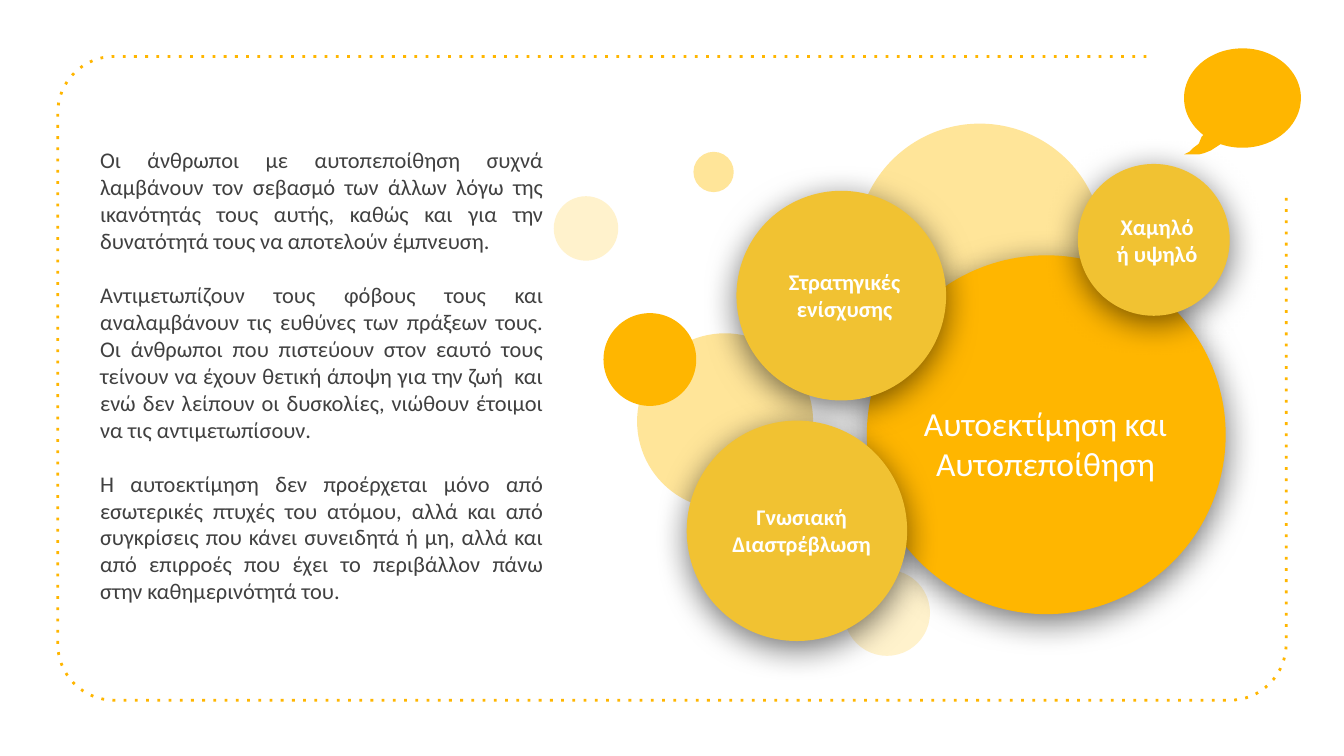
from dataclasses import dataclass
from math import cos, radians, sin

from lxml import etree
from pptx import Presentation
from pptx.dml.color import RGBColor
from pptx.enum.dml import MSO_LINE
from pptx.enum.shapes import MSO_SHAPE
from pptx.enum.text import MSO_ANCHOR, MSO_AUTO_SIZE, PP_ALIGN
from pptx.oxml.ns import qn
from pptx.util import Inches, Pt

OVAL = MSO_SHAPE.OVAL
DOT = MSO_LINE.ROUND_DOT
CENTER, JUSTIFY = PP_ALIGN.CENTER, PP_ALIGN.JUSTIFY
TOP, MIDDLE = MSO_ANCHOR.TOP, MSO_ANCHOR.MIDDLE
NO_FIT = MSO_AUTO_SIZE.NONE

# The slide is a grid of square cells, 100 columns wide, in 16:9
COLS, ROWS = 100, 56.25
CELL = Inches(0.1)


@dataclass(frozen=True)
class Theme:
    font: str = "Calibri"
    amber: str = "FFB600"
    gold: str = "F1C232"
    sand: str = "FFE599"
    cream: str = "FFF2CC"
    ink: str = "404040"
    white: str = "FFFFFF"
    shade: str = "000000"
    head: int = 18
    text: int = 12
    gap: float = 14.6
    line: float = 1.5


THEME = Theme()

TITLE = "Αυτοεκτίμηση και Αυτοπεποίθηση"
BODY = [
    "Οι άνθρωποι με αυτοπεποίθηση συχνά λαμβάνουν τον σεβασμό των άλλων "
    "λόγω της ικανότητάς τους αυτής, καθώς και για την δυνατότητά τους να "
    "αποτελούν έμπνευση.",
    "Αντιμετωπίζουν τους φόβους τους και αναλαμβάνουν τις ευθύνες των "
    "πράξεων τους. Οι άνθρωποι που πιστεύουν στον εαυτό τους τείνουν να "
    "έχουν θετική άποψη για την ζωή  και ενώ δεν λείπουν οι δυσκολίες, "
    "νιώθουν έτοιμοι να τις αντιμετωπίσουν.",
    "Η αυτοεκτίμηση δεν προέρχεται μόνο από εσωτερικές πτυχές του ατόμου, "
    "αλλά και από συγκρίσεις που κάνει συνειδητά ή μη, αλλά και από επιρροές "
    "που έχει το περιβάλλον πάνω στην καθημερινότητά του.",
]

# Column, row, diameter, colour
BUBBLES = [
    (62.8, 42.4, 6.4, THEME.cream),
    (41.2, 14.6, 4.8, THEME.cream),
    (47.4, 24.8, 13.1, THEME.sand),
    (63.7, 9.2, 18.4, THEME.sand),
    (44.9, 23.3, 6.9, THEME.amber),
    (51.6, 11.3, 3, THEME.sand),
]

# Column, row, diameter, label, label box
TOPICS = [
    (54.8, 14.2, 15.6, "Στρατηγικές ενίσχυσης", (55.3, 16.8, 15.1, 10.3)),
    (51.1, 31.3, 16.4, "Γνωσιακή Διαστρέβλωση", (52.5, 34.3, 14.3, 10.3)),
    (80.2, 12.2, 11.3, "Χαμηλό ή υψηλό", (81.8, 13.4, 8.6, 8.9)),
]


def cells(*counts):
    return [round(count * CELL) for count in counts]


def color(code):
    return RGBColor.from_string(code)


def place(shape, box):
    shape.left, shape.top, shape.width, shape.height = cells(*box)


def write(shape, texts, size=THEME.text, tint=THEME.white, bold=False,
          align=CENTER, anchor=MIDDLE, pad=1, gap=0):
    """Fill a shape with one plain, unbulleted paragraph per text."""
    frame = shape.text_frame
    frame.word_wrap = True
    frame.auto_size = NO_FIT
    frame.vertical_anchor = anchor
    frame.margin_left, frame.margin_right = cells(1, 1)
    frame.margin_top, frame.margin_bottom = cells(pad, pad)
    for index, text in enumerate(texts):
        para = frame.add_paragraph() if index else frame.paragraphs[0]
        para.alignment = align
        para.space_before = Pt(gap if index else 0)
        run = para.add_run()
        run.text = text
        font = run.font
        font.name, font.size, font.bold = THEME.font, Pt(size), bold
        font.color.rgb = color(tint)
    for props in shape.element.iter(qn("a:pPr")):
        props.set("marL", "0")
        props.set("indent", "0")
        etree.SubElement(props, qn("a:buNone"))


def paint(shape, tint):
    shape.shadow.inherit = False
    shape.fill.solid()
    shape.fill.fore_color.rgb = color(tint)
    shape.line.fill.background()


def shade(shape):
    """Add a soft drop shadow below a painted shape."""
    effects = shape.element.find(".//" + qn("a:effectLst"))
    outer = etree.SubElement(
        effects, qn("a:outerShdw"), blurRad=str(Pt(18)), dist=str(Pt(4)),
        dir=str(90 * 60000), algn="bl", rotWithShape="0")
    tone = etree.SubElement(outer, qn("a:srgbClr"), val=THEME.shade)
    etree.SubElement(tone, qn("a:alpha"), val="55000")


def disc(shapes, col, row, size, tint):
    shape = shapes.add_shape(OVAL, *cells(col, row, size, size))
    paint(shape, tint)
    return shape


def topic(shapes, col, row, size, text, box):
    group = shapes.add_group_shape().shapes
    shade(disc(group, col, row, size, THEME.gold))
    write(group.add_textbox(*cells(*box)), [text], bold=True)


def arc(col, row, wide, high, start, end, steps):
    """List points on an ellipse; angles are degrees with rows going down."""
    turns = [radians(start + (end - start) * i / steps)
             for i in range(steps + 1)]
    return [(col + wide * cos(t), row + high * sin(t)) for t in turns]


def outline(shapes, points, close):
    first, *rest = [cells(*point) for point in points]
    pen = shapes.build_freeform(*first)
    pen.add_line_segments(rest, close=close)
    return pen.convert_to_shape()


def border(shapes):
    """Draw the dotted frame, open at the top right corner."""
    left, top, right, foot, bend = 4.3, 4.2, 95.7, 52.1, 4.2
    points = [(85.3, top)]
    for col, row, start in ((left + bend, top + bend, 270),
                            (left + bend, foot - bend, 180),
                            (right - bend, foot - bend, 90)):
        points += arc(col, row, bend, bend, start, start - 90, 16)
    points.append((right, 14.6))
    shape = outline(shapes, points, False)
    shape.shadow.inherit = False
    shape.fill.background()
    shape.line.color.rgb = color(THEME.amber)
    shape.line.width = Pt(THEME.line)
    shape.line.dash_style = DOT
    shape.element.find(".//" + qn("a:prstDash")).set("val", "dot")


def speech(shapes):
    tail = [(90.1, 11.2), (89.6, 11.4), (89.2, 11.5), (88.1, 11.5),
            (88.5, 11.3), (88.8, 11), (89.2, 10.7), (89.4, 10.2)]
    ring = arc(92.45, 7.3, 4.35, 3.7, 132, 472, 80)
    paint(outline(shapes, ring + tail, True), THEME.amber)


def main():
    deck = Presentation()
    deck.slide_width, deck.slide_height = cells(COLS, ROWS)
    slide = deck.slides.add_slide(deck.slide_layouts[1])
    shapes = slide.shapes
    title, body = slide.placeholders

    border(shapes)
    for bubble in BUBBLES:
        disc(shapes, *bubble)
    core = disc(shapes, 64.5, 19, 26.7, THEME.amber)
    shade(core)
    place(title, (67.6, 26.6, 20.4, 12.7))
    write(title, [TITLE], size=THEME.head)
    core.element.addnext(title.element)
    for item in TOPICS:
        topic(shapes, *item)
    speech(shapes)
    place(body, (6.45, 10.4, 35, 35.3))
    write(body, BODY, tint=THEME.ink, align=JUSTIFY, anchor=TOP, pad=0.5,
          gap=THEME.gap)
    deck.save("out.pptx")


if __name__ == "__main__":
    main()
